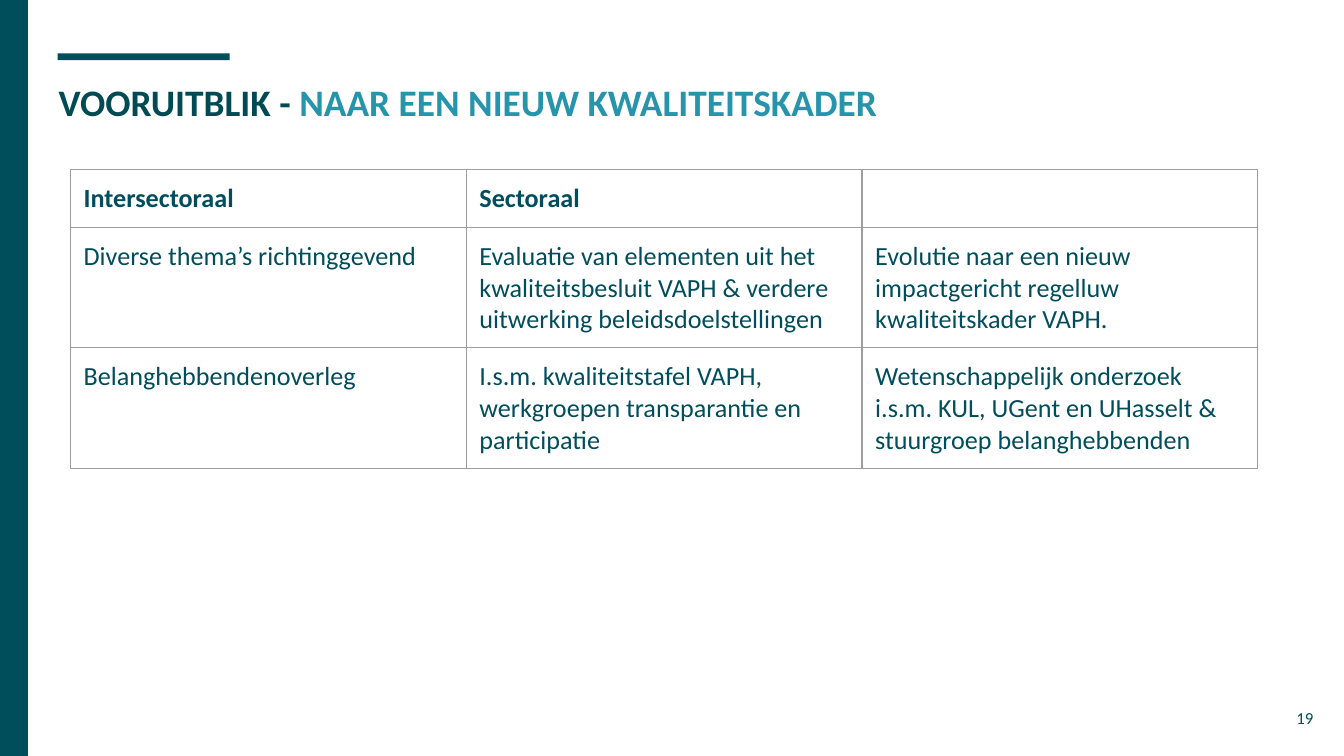
from lxml import etree
from pptx import Presentation
from pptx import util as u
from pptx.dml.color import RGBColor
from pptx.enum import shapes, text
from pptx.oxml import ns

COLORS = {
    "teal": "004D5C",
    "title": "004B53",
    "accent": "2695AB",
    "border": "9E9E9E",
}
ROWS = [
    ["Intersectoraal", "Sectoraal", ""],
    [
        "Diverse thema’s richtinggevend",
        "Evaluatie van elementen uit het kwaliteitsbesluit VAPH & verdere uitwerking beleidsdoelstellingen",
        "Evolutie naar een nieuw impactgericht regelluw kwaliteitskader VAPH.",
    ],
    [
        "Belanghebbendenoverleg",
        "I.s.m. kwaliteitstafel VAPH, werkgroepen transparantie en participatie",
        "Wetenschappelijk onderzoek i.s.m. KUL, UGent en UHasselt & stuurgroep belanghebbenden",
    ],
]


class Deck:
    font = "Calibri"
    inset = u.Cm(0.25)

    def __init__(self, width, height):
        self.prs = Presentation()
        self.prs.slide_width = u.Cm(width)
        self.prs.slide_height = u.Cm(height)
        self.s = self.prs.slides.add_slide(self.prs.slide_layouts[6])

    def color(self, name):
        return RGBColor.from_string(COLORS[name])

    def style(self, r, size, color, bold=False):
        r.font.name = self.font
        r.font.size = u.Pt(size)
        r.font.bold = bold
        r.font.color.rgb = self.color(color)

    def pad(self, box):
        box.margin_left = box.margin_right = self.inset
        box.margin_top = box.margin_bottom = self.inset

    def bar(self, *at):
        sp = self.s.shapes.add_shape(shapes.MSO_SHAPE.RECTANGLE, *map(u.Cm, at))
        sp.shadow.inherit = False
        sp.fill.solid()
        sp.fill.fore_color.rgb = self.color("teal")
        sp.line.fill.background()

    def label(self, at, parts, size, bold=False, align=text.PP_ALIGN.LEFT):
        tf = self.s.shapes.add_textbox(*map(u.Cm, at)).text_frame
        tf.word_wrap = True
        self.pad(tf)
        p = tf.paragraphs[0]
        p.alignment = align
        for words, color in parts:
            r = p.add_run()
            r.text = words
            self.style(r, size, color, bold)

    def border(self, cell):
        props = cell._tc.get_or_add_tcPr()
        for i, side in enumerate(("lnL", "lnR", "lnT", "lnB")):
            ln = etree.Element(ns.qn(f"a:{side}"), w=str(u.Pt(0.75)))
            fill = etree.SubElement(ln, ns.qn("a:solidFill"))
            etree.SubElement(fill, ns.qn("a:srgbClr"), val=COLORS["border"])
            props.insert(i, ln)

    def table(self, left, top, col_width, row_height, rows, size):
        n_rows, n_cols = len(rows), len(rows[0])
        at = (left, top, col_width * n_cols, row_height * n_rows)
        tbl = self.s.shapes.add_table(n_rows, n_cols, *map(u.Cm, at)).table
        tbl.first_row = tbl.horz_banding = False
        for i, row in enumerate(rows):
            for j, words in enumerate(row):
                cell = tbl.cell(i, j)
                cell.fill.background()
                self.pad(cell)
                self.border(cell)
                cell.text = words
                p = cell.text_frame.paragraphs[0]
                for r in p.runs:
                    self.style(r, size, "teal", bold=i == 0)
                if not words:
                    etree.SubElement(p._p, ns.qn("a:endParaRPr"), sz=str(size * 100))


def main():
    deck = Deck(25.4, 14.29)
    deck.bar(1.09, 1.01, 3.25, 0.13)
    deck.bar(0, 0, 0.53, 14.29)
    heading = [("VOORUITBLIK - ", "title"), ("NAAR EEN NIEUW KWALITEITSKADER", "accent")]
    deck.label((0.86, 1.25, 23.67, 1.6), heading, 20, bold=True)
    deck.label((23.55, 13.19, 1.52, 1.09), [("19", "teal")], 9, align=text.PP_ALIGN.RIGHT)
    deck.table(1.33, 3.2, 7.48, 1.07, ROWS, 14)
    deck.prs.save("out.pptx")


if __name__ == "__main__":
    main()
